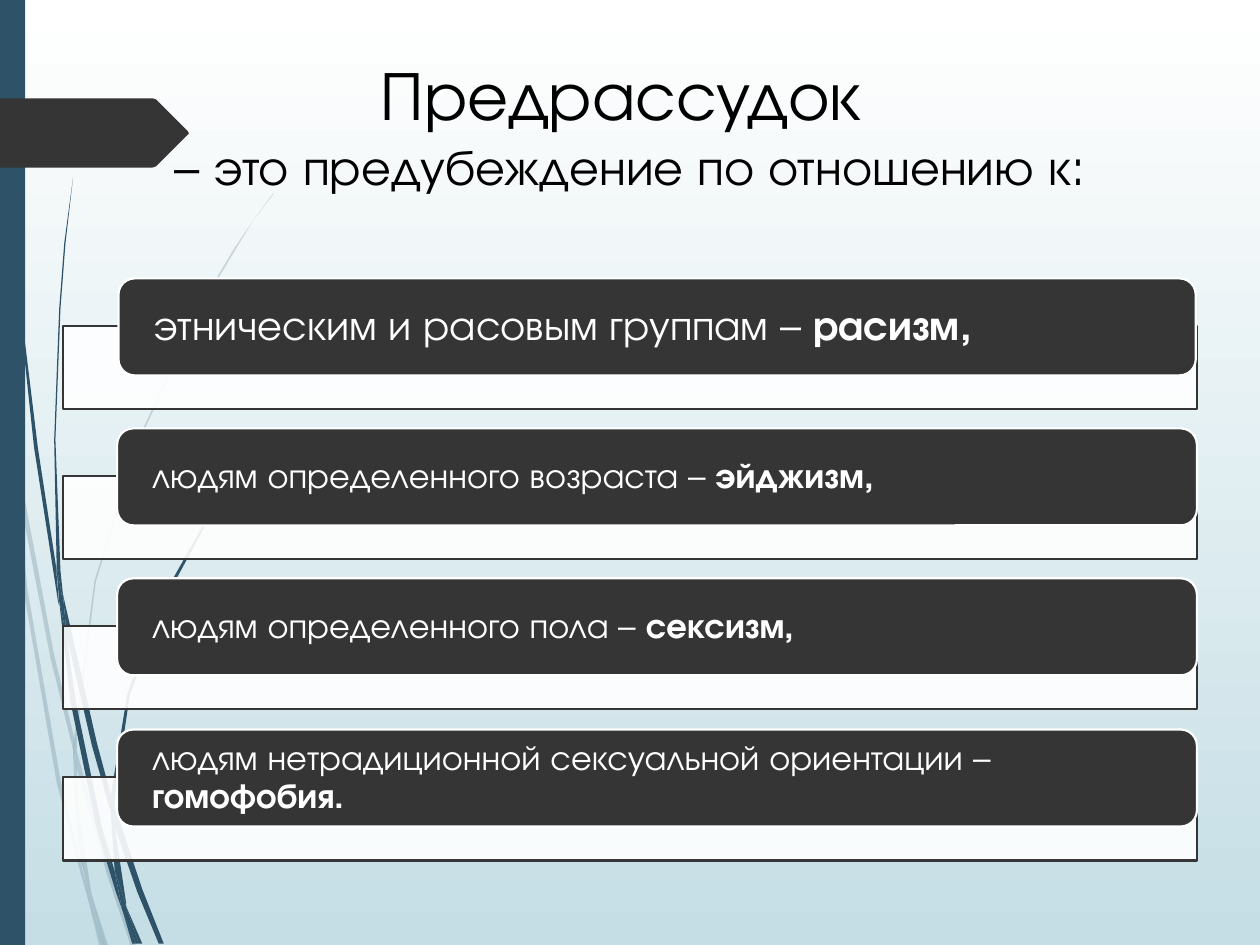
import pptx
import pptx.util
import pptx.dml.color
import pptx.enum.shapes
import pptx.enum.text
import lxml.etree

PX = 9144
FONT = "TeX Gyre Adventor"
BLACK = pptx.dml.color.RGBColor(0x00, 0x00, 0x00)
WHITE = pptx.dml.color.RGBColor(0xFF, 0xFF, 0xFF)
MIST = pptx.dml.color.RGBColor(0xC5, 0xDE, 0xE5)
TEAL = pptx.dml.color.RGBColor(0x2E, 0x53, 0x69)
CHARCOAL = pptx.dml.color.RGBColor(0x35, 0x35, 0x35)

PALE_BLADES = [
    [(8, 350), (6, 322), (0, 282), (0, 299), (7, 344)],
    [(40, 522), (59, 599), (59, 586), (43, 520), (10, 345), (12, 376)],
    [(64, 607), (61, 596), (61, 610), (85, 694), (104, 751), (108, 751), (88, 692)],
    [(83, 751), (86, 751), (73, 711)],
    [(64, 683), (48, 619), (22, 469), (12, 376), (8, 350), (19, 470), (45, 621),
     (64, 693), (70, 714), (69, 707)],
    [(58, 599), (60, 646), (64, 683), (67, 692), (73, 711), (72, 706), (63, 646),
     (61, 610), (61, 608)],
    [(61, 584), (76, 462), (111, 349), (159, 245), (187, 198), (201, 175), (217, 154),
     (217, 153), (201, 175), (186, 197), (158, 244), (110, 348), (75, 461), (59, 584),
     (59, 586), (61, 596)],
    [(70, 714), (79, 751), (82, 751)],
    [(61, 608), (61, 610), (61, 596), (59, 586), (58, 599)],
    [(67, 692), (65, 683), (69, 707), (70, 714), (82, 751), (83, 751), (73, 711)],
]
DARK_BLADES = [
    [(5, 110), (14, 233), (27, 355), (46, 477), (47, 481), (45, 457), (45, 453),
     (30, 355), (15, 232), (6, 109), (4, 48), (3, 0), (2, 0), (3, 48)],
    [(73, 592), (88, 645), (88, 633), (88, 631), (77, 590), (50, 472), (53, 505)],
    [(94, 649), (91, 641), (91, 656), (109, 708), (126, 749), (130, 749), (113, 706)],
    [(91, 691), (81, 657), (60, 556), (53, 505), (47, 477), (56, 557), (77, 659),
     (92, 708), (97, 722), (96, 717)],
    [(50, 472), (48, 453), (44, 349), (48, 245), (52, 193), (58, 141), (51, 193),
     (47, 245), (43, 349), (45, 449), (49, 472)],
    [(110, 749), (113, 749), (100, 719)],
    [(47, 477), (53, 505), (50, 472), (49, 472), (45, 449), (45, 453)],
    [(91, 633), (103, 552), (131, 476), (169, 406), (191, 374), (203, 359), (216, 344),
     (215, 344), (203, 358), (191, 373), (168, 405), (129, 474), (101, 551), (88, 631),
     (91, 641)],
    [(97, 722), (105, 749), (108, 749)],
    [(88, 645), (91, 691), (96, 706), (100, 719), (100, 716), (91, 656), (90, 651)],
    [(88, 645), (90, 651), (91, 656), (91, 641), (88, 631), (88, 633)],
    [(96, 706), (91, 691), (96, 717), (97, 722), (108, 749), (110, 749), (100, 719)],
]
POINTER = [(149, 107), (124, 132), (121, 133), (0, 133), (0, 78), (121, 78),
           (124, 79), (149, 104), (150, 106)]
PREJUDICES = [
    ("этническим и расовым группам – ", "расизм,", 24),
    ("людям определенного возраста – ", "эйджизм,", 20),
    ("людям определенного пола – ", "сексизм,", 20),
    ("людям нетрадиционной сексуальной ориентации –", "гомофобия.", 20),
]


def paint(shape, color, opacity=100, line=None):
    """Fill a shape and give it an outline or none."""
    shape.shadow.inherit = False
    shape.fill.solid()
    shape.fill.fore_color.rgb = color
    if opacity < 100:
        tint = shape.fill._xPr.find(".//" + pptx.oxml.ns.qn("a:srgbClr"))
        alpha = lxml.etree.SubElement(tint, pptx.oxml.ns.qn("a:alpha"))
        alpha.set("val", str(opacity * 1000))
    if line is None:
        shape.line.fill.background()
    else:
        shape.line.color.rgb = line
        shape.line.width = pptx.util.Pt(1.25)


def add_outline(shapes, points, color, opacity=100):
    """Draw a closed outline through the points."""
    builder = shapes.build_freeform(*points[0], scale=PX)
    builder.add_line_segments(points[1:], close=True)
    paint(builder.convert_to_shape(), color, opacity)


def add_blades(page, blades, opacity):
    """Draw one group of grass blades."""
    group = page.shapes.add_group_shape()
    for points in blades:
        add_outline(group.shapes, points, TEAL, opacity)


def add_block(page, kind, bounds, color, opacity=100, line=None):
    """Draw a preset shape and return it."""
    block = page.shapes.add_shape(kind, *(length * PX for length in bounds))
    paint(block, color, opacity, line)
    return block


def add_span(para, words, size, color, bold=False):
    """Add one run of text."""
    span = para.add_run()
    span.text = words
    span.font.name = FONT
    span.font.size = pptx.util.Pt(size)
    span.font.color.rgb = color
    span.font.bold = bold


def add_title(page):
    """Write the two centred title lines."""
    box = page.shapes.add_textbox(50 * PX, 36 * PX, 900 * PX, 165 * PX)
    box.text_frame.word_wrap = True
    para = box.text_frame.paragraphs[0]
    para.alignment = pptx.enum.text.PP_ALIGN.CENTER
    add_span(para, "Предрассудок", 39.6, BLACK)
    add_span(para, " ", 36, BLACK)
    para.add_line_break()
    add_span(para, "– это предубеждение по отношению к:", 28.8, BLACK)


def add_prejudice(page, index, group_name, term, size):
    """Draw one list row: a pale bar with a dark label over it."""
    kinds = pptx.enum.shapes.MSO_SHAPE
    shift = index * 358 // 3
    add_block(page, kinds.RECTANGLE, (50, 259 + shift, 900, 66), WHITE, 90, CHARCOAL)
    bounds = (93, 221 + shift, 857, 77) if index else (94, 221, 855, 77)
    label = add_block(page, kinds.ROUNDED_RECTANGLE, bounds, CHARCOAL, line=WHITE)
    frame = label.text_frame
    frame.word_wrap = True
    frame.vertical_anchor = pptx.enum.text.MSO_ANCHOR.MIDDLE
    frame.margin_left = frame.margin_right = 24 * PX
    frame.margin_top = frame.margin_bottom = 0
    para = frame.paragraphs[0]
    para.alignment = pptx.enum.text.PP_ALIGN.LEFT
    para.line_spacing = 0.9
    add_span(para, group_name, size, WHITE)
    add_span(para, term, size, WHITE, bold=True)


def set_background(page):
    """Fade the page from white at the top to pale blue."""
    fill = page.background.fill
    fill.gradient()
    fill.gradient_angle = 270
    for stop, color, position in zip(fill.gradient_stops, (WHITE, MIST), (0, 1)):
        stop.color.rgb = color
        stop.position = position


def main():
    """Build the slide and save it."""
    deck = pptx.Presentation()
    deck.slide_width, deck.slide_height = 1000 * PX, 750 * PX
    page = deck.slides.add_slide(deck.slide_layouts[6])
    set_background(page)
    add_blades(page, PALE_BLADES, 20)
    add_blades(page, DARK_BLADES, 100)
    add_block(page, pptx.enum.shapes.MSO_SHAPE.RECTANGLE, (0, 0, 20, 750), TEAL)
    add_outline(page.shapes, POINTER, CHARCOAL)
    add_title(page)
    for index, prejudice in enumerate(PREJUDICES):
        add_prejudice(page, index, *prejudice)
    deck.save("out.pptx")


if __name__ == "__main__":
    main()
